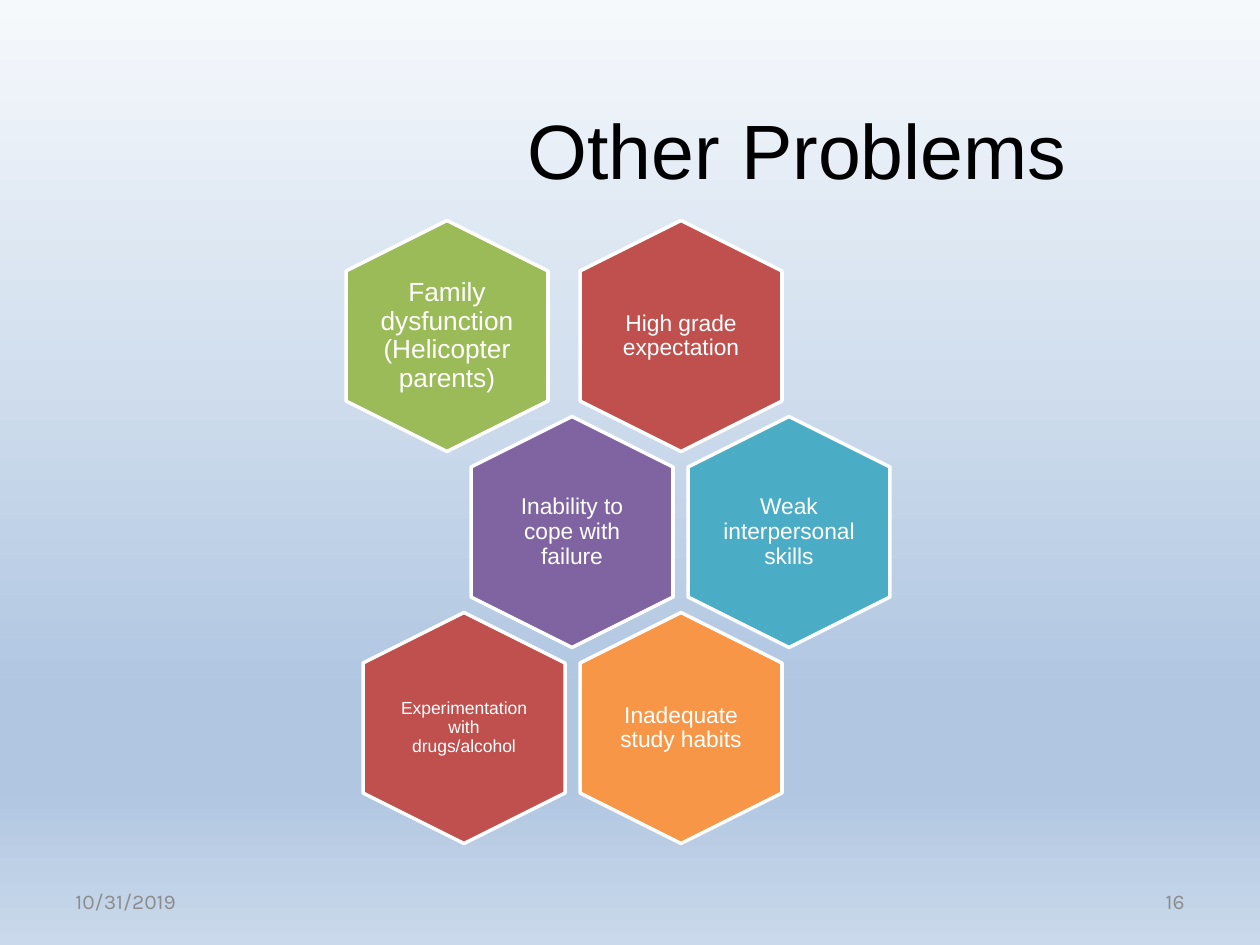
"""Build the "Other Problems" slide with a honeycomb of six causes."""
import copy

import pptx
import pptx.dml.color
import pptx.enum.shapes
import pptx.enum.text
import pptx.oxml.ns
import pptx.util

RGBColor = pptx.dml.color.RGBColor
Align = pptx.enum.text.PP_ALIGN
Anchor = pptx.enum.text.MSO_ANCHOR

BLACK = RGBColor(0x00, 0x00, 0x00)
WHITE = RGBColor(0xFF, 0xFF, 0xFF)
GREY = RGBColor(0x8C, 0x8C, 0x8C)
RED = RGBColor(0xC0, 0x50, 0x4D)
GREEN = RGBColor(0x9B, 0xBB, 0x59)
PURPLE = RGBColor(0x80, 0x64, 0xA2)
TEAL = RGBColor(0x4B, 0xAC, 0xC6)
ORANGE = RGBColor(0xF7, 0x96, 0x46)
SKY = [
    (0, RGBColor(0xF6, 0xF9, 0xFC)),
    (0.74, RGBColor(0xB0, 0xC6, 0xE1)),
    (0.83, RGBColor(0xB0, 0xC6, 0xE1)),
    (1, RGBColor(0xCA, 0xD9, 0xEB)),
]


def px(*lengths):
    return [pptx.util.Emu(round(length * 914400 / 126)) for length in lengths]


def write(box, text, size, font, color, align):
    frame = box.text_frame
    frame.word_wrap = True
    frame.vertical_anchor = Anchor.MIDDLE
    frame.text = text
    paragraph = frame.paragraphs[0]
    paragraph.alignment = align
    paragraph.font.size = pptx.util.Pt(size)
    paragraph.font.name = font
    paragraph.font.color.rgb = color
    return frame


deck = pptx.Presentation()
deck.slide_width, deck.slide_height = px(1260, 945)
slide = deck.slides.add_slide(deck.slide_layouts[5])

backdrop = slide.background.fill
backdrop.gradient()
backdrop.gradient_angle = 270
stop_list = slide.element.find(".//" + pptx.oxml.ns.qn("a:gsLst"))
for _ in range(len(SKY) - len(stop_list)):
    stop_list.append(copy.deepcopy(stop_list[0]))
for stop, (position, color) in zip(backdrop.gradient_stops, SKY):
    stop.position = position
    stop.color.rgb = color

title = slide.shapes.title
title.left, title.top, title.width, title.height = px(388, 84, 840, 130)
write(title, "Other Problems ", 44, "Arial", BLACK, Align.CENTER)

HEX_LENGTH, HEX_BREADTH = 231, 202
LABEL_WIDTH, LABEL_HEIGHT = 139, 159
FIRST_ROW, ROW_PITCH = 336, 196
problems = [
    (681, 0, "High grade expectation", RED, 13, 6),
    (447, 0, "Family dysfunction (Helicopter parents)", GREEN, 15, 0),
    (572, 1, "Inability to cope with failure", PURPLE, 13, 6),
    (789, 1, "Weak interpersonal skills", TEAL, 13, 0),
    (681, 2, "Inadequate study habits", ORANGE, 13, 6),
    (464, 2, "Experimentation with drugs/alcohol", RED, 10, 0),
]
for center, row, problem, color, size, inset in problems:
    middle = FIRST_ROW + row * ROW_PITCH
    cell = slide.shapes.add_shape(
        pptx.enum.shapes.MSO_SHAPE.HEXAGON,
        *px(center - HEX_LENGTH / 2, middle - HEX_BREADTH / 2, HEX_LENGTH, HEX_BREADTH),
    )
    cell.adjustments[0] = 0.25
    cell.adjustments[1] = 1.1547
    cell.rotation = 90
    cell.shadow.inherit = False
    cell.fill.solid()
    cell.fill.fore_color.rgb = color
    cell.line.color.rgb = WHITE
    cell.line.width = pptx.util.Pt(2)

    label = slide.shapes.add_textbox(
        *px(center - LABEL_WIDTH / 2, middle - LABEL_HEIGHT / 2, LABEL_WIDTH, LABEL_HEIGHT)
    )
    frame = write(label, problem, size, "Arial", WHITE, Align.CENTER)
    frame.paragraphs[0].line_spacing = 0.9
    frame.margin_left, frame.margin_top, frame.margin_right, frame.margin_bottom = px(*[inset] * 4)

for left, text, align in [(63, "10/31/2019", Align.LEFT), (903, "16", Align.RIGHT)]:
    footer = slide.shapes.add_textbox(*px(left, 876, 294, 50))
    write(footer, text, 12, "Karla", GREY, align)

deck.save("out.pptx")
